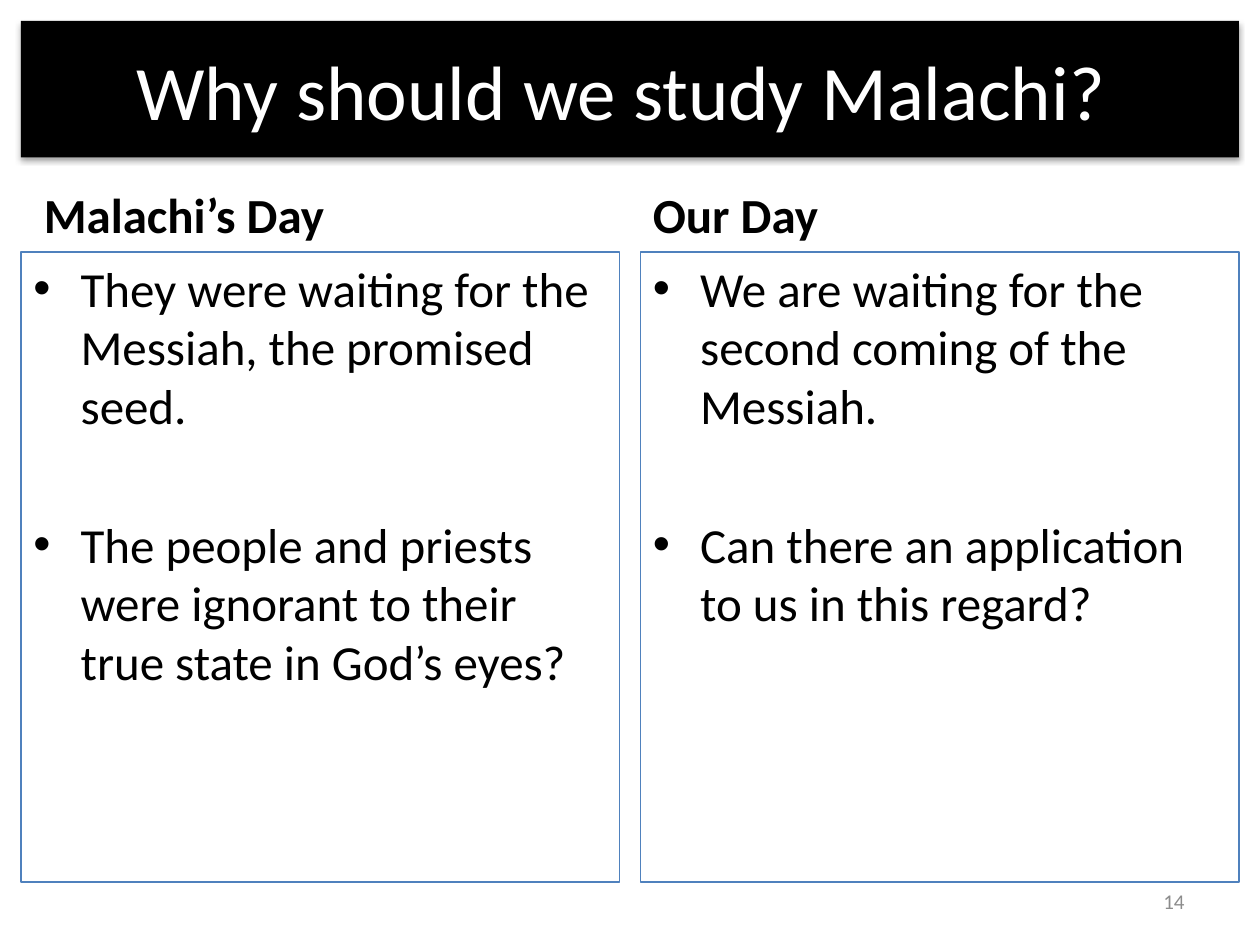
from dataclasses import dataclass

from lxml.etree import SubElement
from pptx import Presentation
from pptx.dml.color import RGBColor as Rgb
from pptx.enum.shapes import MSO_SHAPE as Kind
from pptx.enum.text import MSO_ANCHOR as Anchor, MSO_AUTO_SIZE as Fit, PP_ALIGN as Align
from pptx.oxml.ns import qn
from pptx.util import Pt


@dataclass(frozen=True)
class Theme:
    font: str = "Calibri"
    ink: Rgb = Rgb(0, 0, 0)
    paper: Rgb = Rgb(255, 255, 255)
    edge: Rgb = Rgb(0x4F, 0x81, 0xBD)
    muted: Rgb = Rgb(0x8C, 0x8C, 0x8C)
    title: float = 44
    body: float = 28
    small: float = 12


@dataclass(frozen=True)
class Box:
    left: float
    top: float
    width: float
    height: float

    def spans(self) -> list:
        return [Pt(n) for n in (self.left, self.top, self.width, self.height)]


@dataclass(frozen=True)
class Column:
    head: str
    head_left: float
    left: float
    points: tuple


THEME = Theme()
INDENT = 27
LEAD = 5.6
GAP = 45.4
COLUMNS = (
    Column("Malachi’s Day", 18, 12, (
        "They were waiting for the Messiah, the promised seed.",
        "The people and priests were ignorant to their true state in God’s eyes?",
    )),
    Column("Our Day", 366, 366, (
        "We are waiting for the second coming of the Messiah.",
        "Can there an application to us in this regard?",
    )),
)


def add_run(para, text: str, size: float, color: Rgb, bold: bool = False) -> None:
    run = para.add_run()
    run.text = text
    font = run.font
    font.name, font.size, font.bold = THEME.font, Pt(size), bold
    font.color.rgb = color


def add_bullet(para) -> None:
    """Give the paragraph a round bullet with a hanging indent."""
    props = para._p.get_or_add_pPr()
    props.set("marL", str(Pt(INDENT)))
    props.set("indent", str(Pt(-INDENT)))
    SubElement(props, qn("a:buFont"), typeface="Arial")
    SubElement(props, qn("a:buChar"), char="•")


def add_shadow(shape) -> None:
    """Cast a soft black shadow straight down."""
    effects = SubElement(shape._element.spPr, qn("a:effectLst"))
    cast = SubElement(effects, qn("a:outerShdw"), blurRad=str(Pt(3.1)),
                      dist=str(Pt(1.8)), dir="5400000", rotWithShape="0")
    color = SubElement(cast, qn("a:srgbClr"), val=str(THEME.ink))
    SubElement(color, qn("a:alpha"), val="35000")


def draw_title(slide, text: str, box: Box) -> None:
    title = slide.shapes.title
    title.left, title.top, title.width, title.height = box.spans()
    title.fill.solid()
    title.fill.fore_color.rgb = THEME.ink
    title.line.fill.background()
    add_shadow(title)
    frame = title.text_frame
    frame.auto_size = Fit.NONE
    frame.vertical_anchor = Anchor.MIDDLE
    para = frame.paragraphs[0]
    para.alignment = Align.CENTER
    add_run(para, text, THEME.title, THEME.paper)


def draw_label(slide, text: str, box: Box, size: float, color: Rgb,
               bold: bool = False, align: Align = Align.LEFT,
               anchor: Anchor = Anchor.TOP) -> None:
    frame = slide.shapes.add_textbox(*box.spans()).text_frame
    frame.word_wrap = True
    frame.vertical_anchor = anchor
    para = frame.paragraphs[0]
    para.alignment = align
    add_run(para, text, size, color, bold)


def draw_panel(slide, points: tuple, box: Box) -> None:
    panel = slide.shapes.add_shape(Kind.RECTANGLE, *box.spans())
    panel.shadow.inherit = False
    panel.fill.background()
    panel.line.color.rgb = THEME.edge
    panel.line.width = Pt(0.75)
    frame = panel.text_frame
    frame.word_wrap = True
    frame.vertical_anchor = Anchor.TOP
    for i, point in enumerate(points):
        para = frame.add_paragraph() if i else frame.paragraphs[0]
        para.alignment = Align.LEFT
        para.space_before = Pt(GAP if i else LEAD)
        add_bullet(para)
        add_run(para, point, THEME.body, THEME.ink)


def draw_column(slide, col: Column) -> None:
    draw_panel(slide, col.points, Box(col.left, 144, 342, 360))
    draw_label(slide, col.head, Box(col.head_left, 102, 330, 41),
               THEME.body, THEME.ink, bold=True)


def main() -> None:
    deck = Presentation()
    deck.slide_width, deck.slide_height = Pt(720), Pt(540)
    slide = deck.slides.add_slide(deck.slide_layouts[5])
    draw_title(slide, "Why should we study Malachi? ", Box(12, 12, 696, 78))
    draw_label(slide, "14", Box(516, 500.5, 168, 28.75), THEME.small,
               THEME.muted, align=Align.RIGHT, anchor=Anchor.MIDDLE)
    for col in COLUMNS:
        draw_column(slide, col)
    deck.save("out.pptx")


if __name__ == "__main__":
    main()
